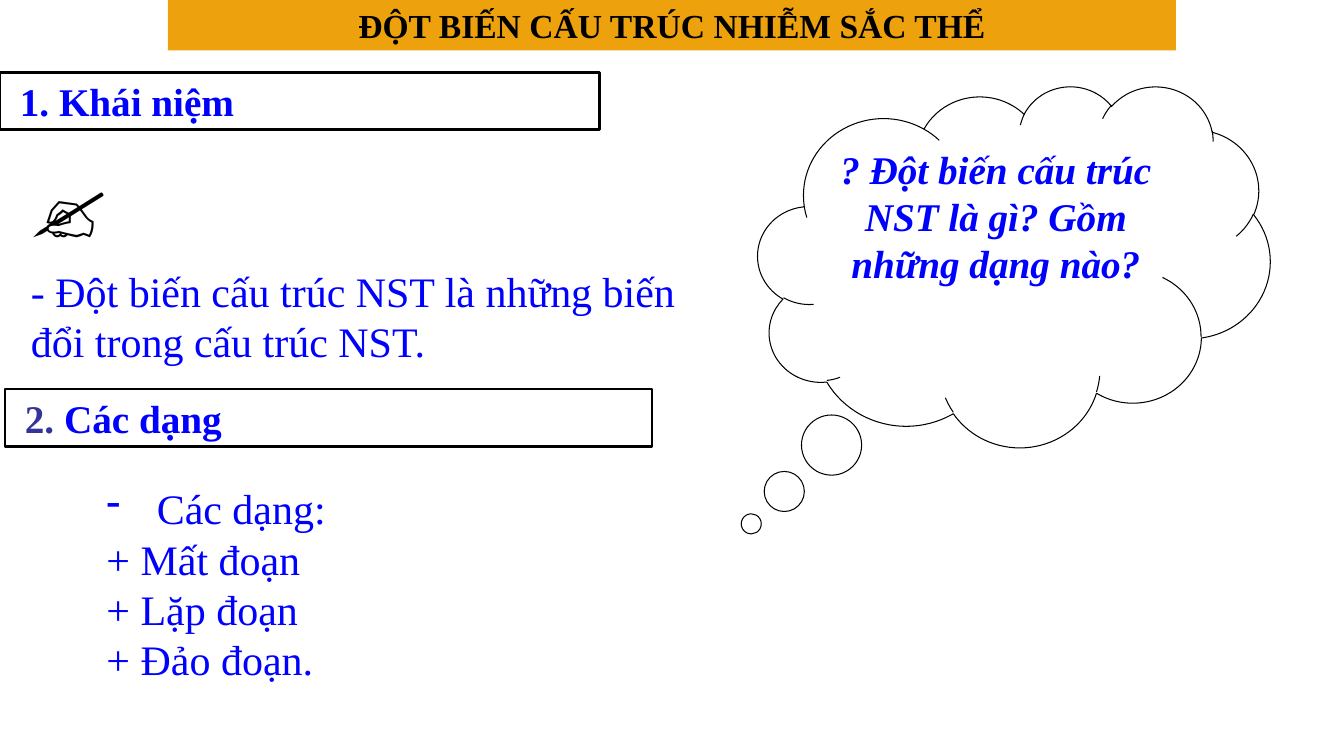
from lxml.etree import SubElement
from pptx import Presentation
from pptx.dml.color import RGBColor
from pptx.enum.shapes import MSO_SHAPE as Shape
from pptx.enum.text import MSO_ANCHOR as Anchor, MSO_AUTO_SIZE as AutoSize, PP_ALIGN as Align
from pptx.oxml.ns import qn
from pptx.util import Pt

BLUE = RGBColor(0x00, 0x00, 0xFF)
INDIGO = RGBColor(0x33, 0x33, 0x99)
BLACK = RGBColor(0x00, 0x00, 0x00)
WHITE = RGBColor(0xFF, 0xFF, 0xFF)
AMBER = RGBColor(0xED, 0xA2, 0x0D)
SERIF = "Times New Roman"


def add_run(paragraph, text, size, color=BLUE, bold=False, italic=False, name=SERIF):
    """Append one formatted run to a paragraph."""
    run = paragraph.add_run()
    run.text = text
    font = run.font
    font.name, font.size, font.bold, font.italic = name, Pt(size), bold, italic
    font.color.rgb = color


def add_outlined(slide, kind, box, line_width):
    """Add a white shape with a black outline and top or middle text."""
    shape = slide.shapes.add_shape(kind, *map(Pt, box))
    shape.shadow.inherit = False
    shape.fill.solid()
    shape.fill.fore_color.rgb = WHITE
    shape.line.color.rgb = BLACK
    shape.line.width = Pt(line_width)
    shape.text_frame.word_wrap = True
    shape.text_frame.vertical_anchor = Anchor.TOP
    return shape


def add_title(slide, box, text):
    """Place the title on its amber band."""
    title = slide.shapes.title
    title.left, title.top, title.width, title.height = map(Pt, box)
    title.fill.solid()
    title.fill.fore_color.rgb = AMBER
    frame = title.text_frame
    frame.auto_size = AutoSize.NONE
    frame.vertical_anchor = Anchor.TOP
    paragraph = frame.paragraphs[0]
    paragraph.alignment = Align.CENTER
    add_run(paragraph, text, 24, BLACK, bold=True)


def add_heading(slide, box, parts):
    """Add a framed section heading made of coloured parts."""
    frame = add_outlined(slide, Shape.RECTANGLE, box, 2).text_frame
    frame.margin_left = Pt(14.2)
    paragraph = frame.paragraphs[0]
    paragraph.alignment = Align.LEFT
    for text, color in parts:
        add_run(paragraph, text, 28, color, bold=True)


def add_question(slide, box, text):
    """Add the thought cloud with its question."""
    cloud = add_outlined(slide, Shape.CLOUD_CALLOUT, box, 0.75)
    cloud.adjustments[0] = -0.513
    cloud.adjustments[1] = 0.714
    paragraph = cloud.text_frame.paragraphs[0]
    paragraph.alignment = Align.CENTER
    add_run(paragraph, text, 28, bold=True, italic=True)


def add_text(slide, box, lines, bulleted=False, **style):
    """Add plain lines of text, the first one optionally with a dash bullet."""
    frame = slide.shapes.add_textbox(*map(Pt, box)).text_frame
    frame.word_wrap = True
    for index, line in enumerate(lines):
        paragraph = frame.add_paragraph() if index else frame.paragraphs[0]
        if bulleted and index == 0:
            properties = paragraph._p.get_or_add_pPr()
            properties.set("marL", str(Pt(36)))
            properties.set("indent", str(-Pt(36)))
            SubElement(properties, qn("a:buFontTx"))
            SubElement(properties, qn("a:buChar")).set("char", "-")
        add_run(paragraph, line, **{"size": 30, **style})
    return frame


def build_slide(presentation):
    """Build the chromosome mutation slide."""
    slide = presentation.slides.add_slide(presentation.slide_layouts[5])
    add_title(slide, (120, 0, 720, 36), "ĐỘT BIẾN CẤU TRÚC NHIỄM SẮC THỂ")
    add_text(slide, (15, 185.8, 482.4, 80),
             ["- Đột biến cấu trúc NST là những biến đổi trong cấu trúc NST."])
    add_text(slide, (69, 341.3, 324, 152.6),
             ["Các dạng:", "+ Mất đoạn", "+ Lặp đoạn", "+ Đảo đoạn."], bulleted=True)
    add_question(slide, (541.4, 61.2, 365.8, 257.8),
                 "? Đột biến cấu trúc NST là gì? Gồm những dạng nào?")
    hand = add_text(slide, (15, 105.1, 63.4, 80), ["✍"],
                    size=60, color=BLACK, bold=True, name="Roboto")
    hand.word_wrap = False
    add_heading(slide, (0, 51.8, 428.4, 41), [("1. Khái niệm", BLUE)])
    add_heading(slide, (3.6, 277.9, 462.2, 41), [("2. ", INDIGO), ("Các dạng", BLUE)])


def main():
    """Create and save the presentation."""
    presentation = Presentation()
    presentation.slide_width, presentation.slide_height = Pt(960), Pt(540)
    build_slide(presentation)
    presentation.save("out.pptx")


if __name__ == "__main__":
    main()
